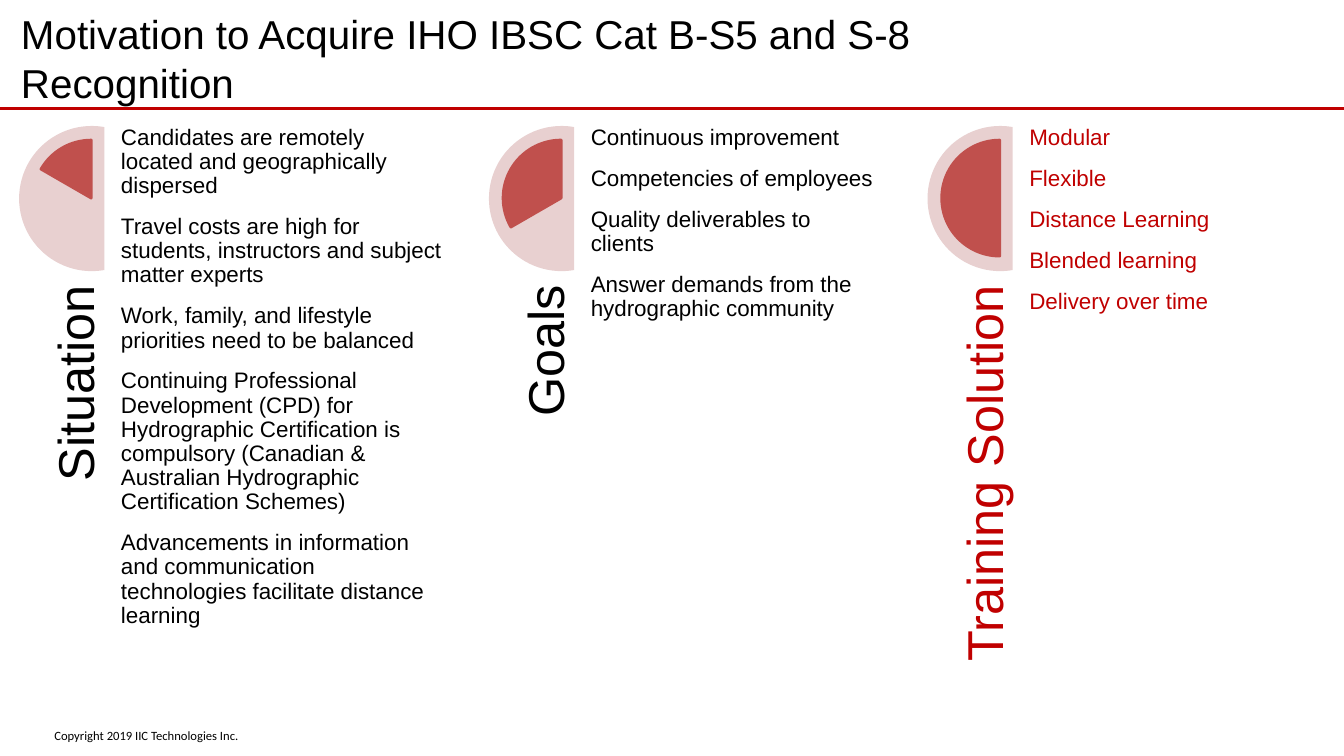
from pptx import Presentation
from pptx.dml.color import RGBColor
from pptx.enum.shapes import MSO_CONNECTOR, MSO_SHAPE
from pptx.enum.text import MSO_ANCHOR, PP_ALIGN
from pptx.oxml.ns import qn
from pptx.util import Emu, Pt
from lxml.etree import SubElement

EMU_PER_PX = 9144
COLORS = {"black": "000000", "rule": "C00000", "dial": "E8D0D0", "wedge": "C0504D"}
COLUMN_TOP = 125
DIAL_SIZE = 144
WEDGE_SIZE = 115
WEDGE_END = 162
LABEL_WIDTH, LABEL_HEIGHT = 416, 86
COLUMNS = [
    {
        "left": 19, "wedge_start": 126, "list_width": 319,
        "label": "Situation", "color": "black",
        "points": [
            "Candidates are remotely located and geographically dispersed",
            "Travel costs are high for students, instructors and subject matter experts",
            "Work, family, and lifestyle priorities need to be balanced",
            "Continuing Professional Development (CPD) for Hydrographic Certification is "
            "compulsory (Canadian & Australian Hydrographic Certification Schemes)",
            "Advancements in information and communication technologies facilitate "
            "distance learning",
        ],
    },
    {
        "left": 485, "wedge_start": 90, "list_width": 287,
        "label": "Goals", "color": "black",
        "points": [
            "Continuous improvement",
            "Competencies of employees",
            "Quality deliverables to clients",
            "Answer demands from the hydrographic community",
        ],
    },
    {
        "left": 920, "wedge_start": 54, "list_width": 287,
        "label": "Training Solution", "color": "rule",
        "points": [
            "Modular",
            "Flexible",
            "Distance Learning",
            "Blended learning",
            "Delivery over time",
        ],
    },
]


def px(length):
    """Turn a length in px into EMU."""
    return Emu(length * EMU_PER_PX)


def rgb(name):
    """Look up a named colour."""
    return RGBColor.from_string(COLORS[name])


def add_text(slide, box, lines, size, color="black", font="Arial", align=PP_ALIGN.LEFT,
             anchor=MSO_ANCHOR.TOP, inset=None, spacing=None, after=0, rotation=0, wrap=True):
    """Add a text box with one paragraph for each line."""
    shape = slide.shapes.add_textbox(*map(px, box))
    shape.rotation = rotation
    frame = shape.text_frame
    frame.word_wrap = wrap
    frame.vertical_anchor = anchor
    if inset is not None:
        frame.margin_left = frame.margin_right = px(inset)
        frame.margin_top = frame.margin_bottom = px(inset)
    frame.text = "\n".join(lines)
    for paragraph in frame.paragraphs:
        paragraph.alignment = align
        paragraph.line_spacing = spacing
        paragraph.space_after = Pt(after)
        paragraph.font.size = Pt(size)
        paragraph.font.name = font
        paragraph.font.color.rgb = rgb(color)


def add_arc_shape(slide, kind, left, top, size, angles, color, line_width=0):
    """Add a filled chord or pie between two angles."""
    shape = slide.shapes.add_shape(kind, px(left), px(top), px(size), px(size))
    shape.shadow.inherit = False
    shape.adjustments[0], shape.adjustments[1] = angles
    shape.fill.solid()
    shape.fill.fore_color.rgb = rgb(color)
    if line_width:
        shape.line.color.rgb = rgb(color)
        shape.line.width = Pt(line_width)
    else:
        shape.line.fill.background()


def add_rule(slide, top, width):
    """Add the horizontal line under the title."""
    rule = slide.shapes.add_connector(MSO_CONNECTOR.STRAIGHT, 0, px(top), px(width), px(top))
    rule.line.color.rgb = rgb("rule")
    rule.line.width = Pt(2.25)
    SubElement(rule._element.spPr, qn("a:effectLst"))


def add_column(slide, left, wedge_start, list_width, label, color, points):
    """Add a dial, its vertical label and its list of points."""
    wedge_inset = (DIAL_SIZE - WEDGE_SIZE) // 2
    add_arc_shape(slide, MSO_SHAPE.CHORD, left, COLUMN_TOP, DIAL_SIZE, (48, 168), "dial")
    add_arc_shape(slide, MSO_SHAPE.PIE, left + wedge_inset, COLUMN_TOP + wedge_inset,
                  WEDGE_SIZE, (wedge_start, WEDGE_END), "wedge", line_width=2)
    label_left = left - (LABEL_WIDTH - LABEL_HEIGHT) // 2
    add_text(slide, (label_left, 448, LABEL_WIDTH, LABEL_HEIGHT), [label], 36, color=color,
             align=PP_ALIGN.RIGHT, anchor=MSO_ANCHOR.BOTTOM, inset=0, spacing=0.9, rotation=270)
    add_text(slide, (left + 101, COLUMN_TOP, list_width, 574), points, 16, color=color,
             inset=0, spacing=0.9, after=12)


def main():
    """Build the slide and save it."""
    presentation = Presentation()
    presentation.slide_width, presentation.slide_height = px(1333), px(750)
    slide = presentation.slides.add_slide(presentation.slide_layouts[6])
    add_rule(slide, 108, 1333)
    add_text(slide, (44, 717, 205, 25), ["Copyright 2019 IIC Technologies Inc."], 9,
             font="Calibri", wrap=False)
    add_text(slide, (11, 24, 1032, 67), ["Motivation to Acquire IHO IBSC Cat B-S5 and S-8 Recognition"],
             28.8, anchor=MSO_ANCHOR.MIDDLE)
    for column in COLUMNS:
        add_column(slide, **column)
    presentation.save("out.pptx")


if __name__ == "__main__":
    main()
